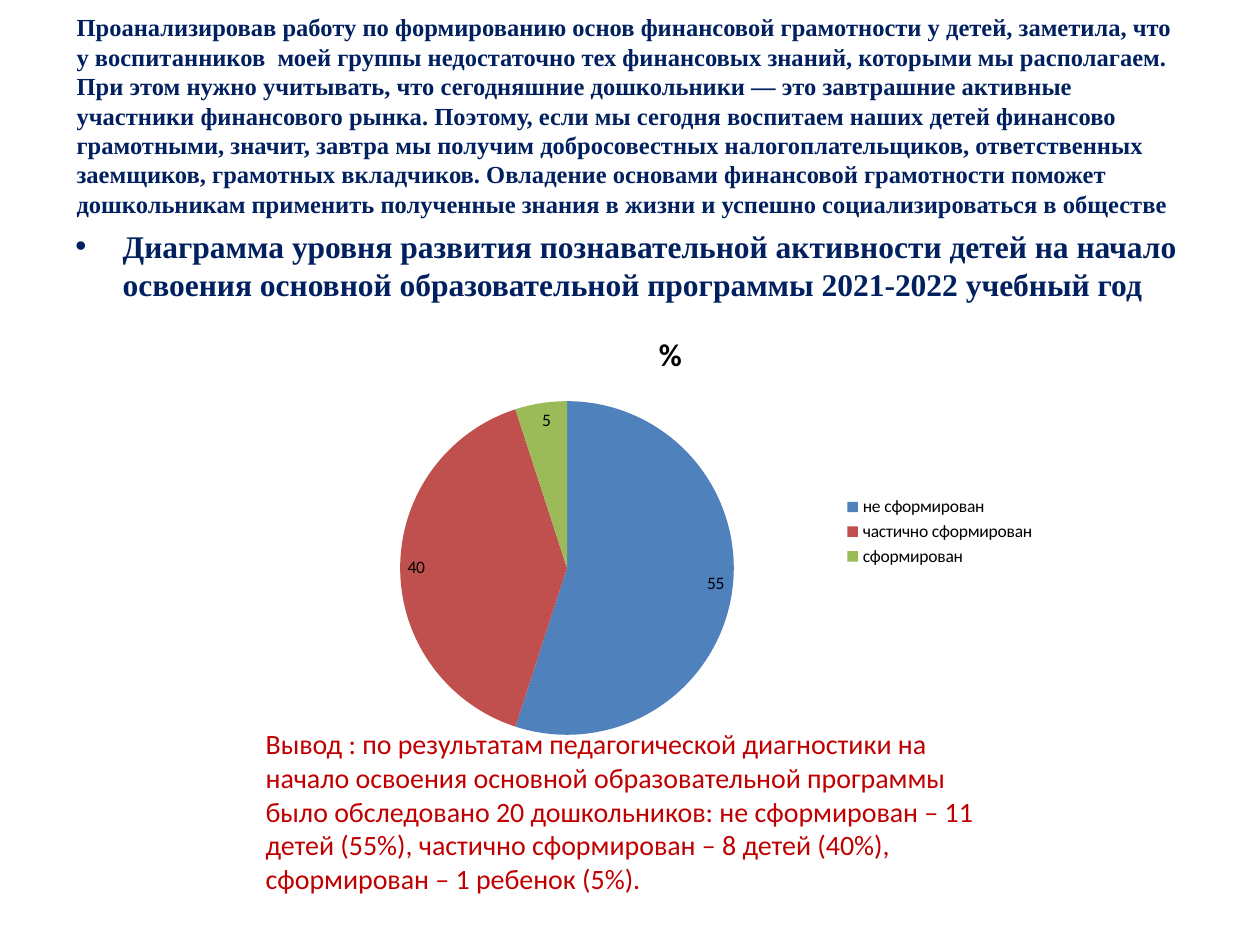
"""Build a slide on financial literacy with a pie chart of preschoolers' levels."""
from lxml import etree
from pptx import Presentation
from pptx.chart.data import CategoryChartData
from pptx.dml.color import RGBColor
from pptx.enum.chart import XL_CHART_TYPE, XL_LABEL_POSITION as LabelPos, XL_LEGEND_POSITION as LegendPos
from pptx.enum.text import MSO_ANCHOR as Anchor
from pptx.oxml.ns import qn
from pptx.util import Pt


def rgb(value):
    return RGBColor.from_string(value)


def add_text(s, box, text, size, font, color, bold=False, anchor=Anchor.TOP):
    tf = s.shapes.add_textbox(*map(Pt, box)).text_frame
    tf.word_wrap = True
    tf.vertical_anchor = anchor
    p = tf.paragraphs[0]
    r = p.add_run()
    r.text = text
    r.font.size = Pt(size)
    r.font.name = font
    r.font.bold = bold
    r.font.color.rgb = rgb(color)
    return p


prs = Presentation()
prs.slide_width, prs.slide_height = Pt(720), Pt(540)
s = prs.slides.add_slide(prs.slide_layouts[6])

heading = (
    "Диаграмма уровня развития познавательной активности детей на начало "
    "освоения основной образовательной программы 2021-2022 учебный год"
)
p = add_text(s, (36, 126, 648, 356.4), heading, 18, "Times New Roman", "002060", True)
p.space_before = Pt(3.6)
pPr = p._p.get_or_add_pPr()
pPr.set("marL", str(Pt(27)))
pPr.set("indent", str(Pt(-27)))
etree.SubElement(pPr, qn("a:buFont"), typeface="Arial")
etree.SubElement(pPr, qn("a:buChar"), char="•")

intro = (
    "Проанализировав работу по формированию основ финансовой грамотности у детей, "
    "заметила, что у воспитанников  моей группы недостаточно тех финансовых знаний, "
    "которыми мы располагаем. При этом нужно учитывать, что сегодняшние дошкольники — "
    "это завтрашние активные участники финансового рынка. Поэтому, если мы сегодня "
    "воспитаем наших детей финансово грамотными, значит, завтра мы получим "
    "добросовестных налогоплательщиков, ответственных заемщиков, грамотных вкладчиков. "
    "Овладение основами финансовой грамотности поможет дошкольникам применить "
    "полученные знания в жизни и успешно социализироваться в обществе"
)
add_text(s, (36.72, 20.88, 648, 90), intro, 14, "Times New Roman", "002060", True, Anchor.MIDDLE)

data = CategoryChartData()
data.categories = ["не сформирован", "частично сформирован", "сформирован"]
data.add_series("%", (55, 40, 5))
box = map(Pt, (167.04, 177.84, 432, 252))
chart = s.shapes.add_chart(XL_CHART_TYPE.PIE, *box, data).chart
chart.font.size = Pt(10)
chart.font.name = "Calibri"
chart.font.color.rgb = rgb("000000")

chart.has_title = True
r = chart.chart_title.text_frame.paragraphs[0].add_run()
r.text = "%"
r.font.size = Pt(18)
r.font.bold = True
r.font.name = "Calibri"
r.font.color.rgb = rgb("000000")

chart.has_legend = True
chart.legend.position = LegendPos.RIGHT
chart.legend.include_in_layout = False

plot = chart.plots[0]
plot.vary_by_categories = True
plot.has_data_labels = True
plot.data_labels.show_value = True
plot.data_labels.show_percentage = False
plot.data_labels.position = LabelPos.INSIDE_END
for i, color in enumerate(("4F81BD", "C0504D", "9BBB59")):
    fill = plot.series[0].points[i].format.fill
    fill.solid()
    fill.fore_color.rgb = rgb(color)

conclusion = (
    "Вывод : по результатам педагогической диагностики на начало освоения основной "
    "образовательной программы  было обследовано 20 дошкольников: не сформирован – "
    "11 детей (55%), частично сформирован – 8 детей (40%), сформирован – 1 ребенок (5%)."
)
add_text(s, (144.72, 411.84, 436.32, 104.4), conclusion, 16, "Calibri", "C00000")

prs.save("out.pptx")
